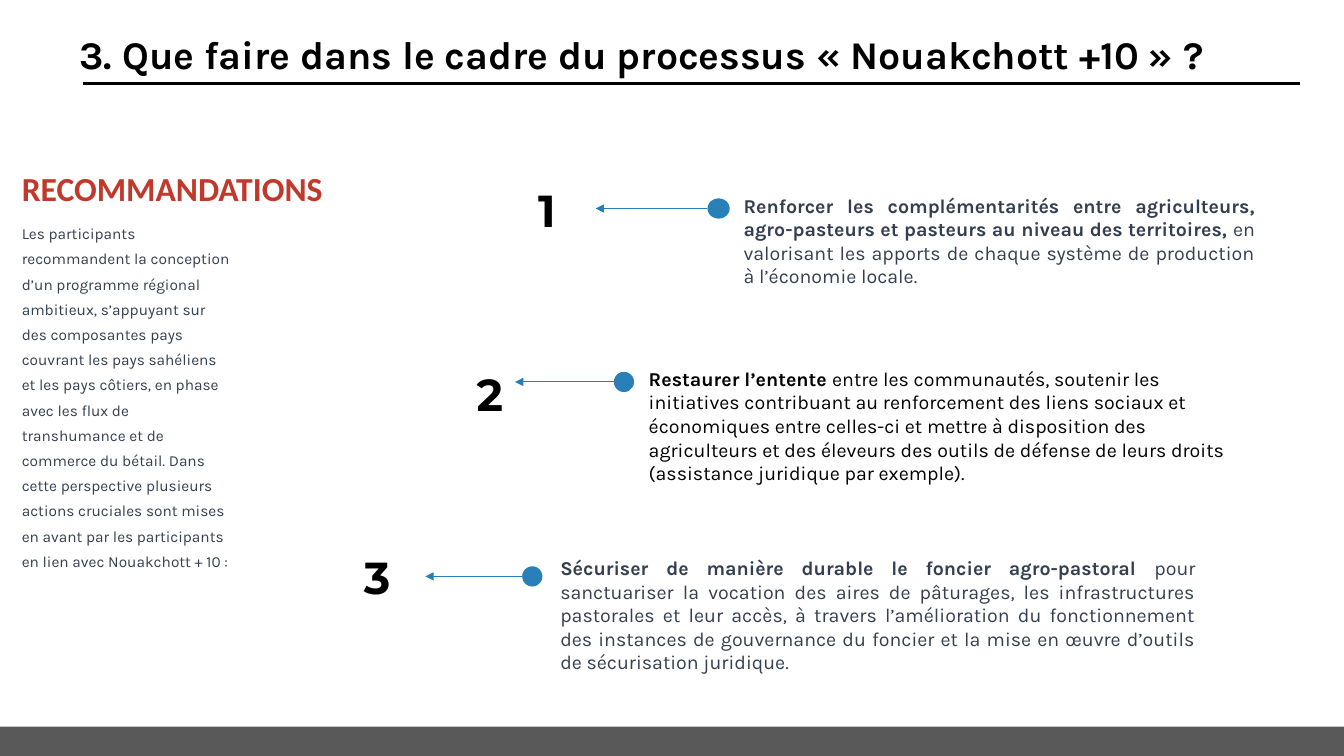
from dataclasses import dataclass

from lxml import etree
from pptx import Presentation
from pptx.dml.color import RGBColor
from pptx.enum import shapes, text
from pptx.oxml import ns
from pptx.util import Cm, Pt


@dataclass(frozen=True)
class Theme:
    black: str = "000000"
    slate: str = "333F50"
    red: str = "C0392B"
    blue: str = "2980B9"
    arrow: str = "257EB8"
    grey: str = "595959"
    body: str = "Karla"
    head: str = "Calibri"
    digit: str = "Montserrat"
    title_size: int = 28
    head_size: int = 24
    digit_size: int = 32
    item_size: int = 14
    note_size: int = 11


@dataclass(frozen=True)
class Box:
    left: float
    top: float
    width: float
    height: float

    def lengths(self) -> tuple:
        return Cm(self.left), Cm(self.top), Cm(self.width), Cm(self.height)


@dataclass(frozen=True)
class Style:
    font: str
    size: int
    color: str
    bold: bool = False


@dataclass(frozen=True)
class Action:
    digit: str
    digit_box: Box
    tip: float
    dot: Box
    box: Box
    lead: str
    rest: str
    color: str
    align: text.PP_ALIGN


THEME = Theme()
LEFT, JUST = text.PP_ALIGN.LEFT, text.PP_ALIGN.JUSTIFY
WIDTH, HEIGHT = 33.87, 19.05

ACTIONS = [
    Action("1", Box(13.31, 4.47, 1.32, 1.63), 15.01,
           Box(17.83, 5, 0.56, 0.51), Box(18.49, 4.75, 13.39, 2.64),
           "Renforcer les complémentarités entre agriculteurs, agro-pasteurs "
           "et pasteurs au niveau des territoires, ",
           "en valorisant les apports de chaque système de production "
           "à l’économie locale.",
           THEME.slate, JUST),
    Action("2", Box(11.76, 9.12, 1.14, 1.63), 12.98,
           Box(15.47, 9.37, 0.51, 0.51), Box(16.1, 9.12, 15.57, 2.64),
           "Restaurer l’entente ",
           "entre les communautés, soutenir les initiatives contribuant au "
           "renforcement des liens sociaux et économiques entre celles-ci et "
           "mettre à disposition des agriculteurs et des éleveurs des outils "
           "de défense de leurs droits (assistance juridique par exemple).",
           THEME.black, LEFT),
    Action("3", Box(8.92, 13.72, 1.3, 1.63), 10.72,
           Box(13.16, 14.27, 0.51, 0.51), Box(13.87, 13.89, 16.51, 3.25),
           "Sécuriser de manière durable le foncier agro-pastoral ",
           "pour sanctuariser la vocation des aires de pâturages, les "
           "infrastructures pastorales et leur accès, à travers "
           "l’amélioration du fonctionnement des instances de gouvernance du "
           "foncier et la mise en œuvre d’outils de sécurisation juridique.",
           THEME.slate, JUST),
]
NOTE = ("Les participants recommandent la conception d’un programme régional "
        "ambitieux, s’appuyant sur des composantes pays couvrant les pays "
        "sahéliens et les pays côtiers, en phase avec les flux de "
        "transhumance et de commerce du bétail. Dans cette perspective "
        "plusieurs actions cruciales sont mises en avant par les participants "
        "en lien avec Nouakchott + 10 :")


def write(frame, runs: list[tuple[str, Style]], align=LEFT,
          anchor=text.MSO_ANCHOR.TOP):
    """Fill the frame's first paragraph and return it."""
    frame.word_wrap = True
    frame.auto_size = text.MSO_AUTO_SIZE.NONE
    frame.vertical_anchor = anchor
    para = frame.paragraphs[0]
    para.alignment = align
    for words, style in runs:
        run = para.add_run()
        run.text = words
        run.font.name = style.font
        run.font.size = Pt(style.size)
        run.font.bold = style.bold
        run.font.color.rgb = RGBColor.from_string(style.color)
    return para


def add_text(slide, box: Box, runs: list[tuple[str, Style]], **layout):
    frame = slide.shapes.add_textbox(*box.lengths()).text_frame
    return write(frame, runs, **layout)


def add_solid(slide, kind, box: Box, color: str) -> None:
    shape = slide.shapes.add_shape(kind, *box.lengths())
    shape.shadow.inherit = False
    shape.fill.solid()
    shape.fill.fore_color.rgb = RGBColor.from_string(color)
    shape.line.fill.background()


def add_line(slide, start: float, end: float, y: float, color: str,
             weight: float, arrow: bool = False) -> None:
    line = slide.shapes.add_connector(
        shapes.MSO_CONNECTOR.STRAIGHT, Cm(start), Cm(y), Cm(end), Cm(y))
    line.line.color.rgb = RGBColor.from_string(color)
    line.line.width = Pt(weight)
    props = line.element.spPr
    if arrow:
        etree.SubElement(props.find(ns.qn("a:ln")), ns.qn("a:tailEnd"),
                         type="triangle")
    etree.SubElement(props, ns.qn("a:effectLst"))


def add_action(slide, act: Action) -> None:
    lead = Style(THEME.body, THEME.item_size, act.color, True)
    rest = Style(THEME.body, THEME.item_size, act.color)
    digit = Style(THEME.digit, THEME.digit_size, THEME.black, True)
    add_text(slide, act.box, [(act.lead, lead), (act.rest, rest)],
             align=act.align)
    add_solid(slide, shapes.MSO_SHAPE.OVAL, act.dot, THEME.blue)
    add_line(slide, act.dot.left, act.tip, act.dot.top + act.dot.height / 2,
             THEME.arrow, 0.75, arrow=True)
    add_text(slide, act.digit_box, [(act.digit, digit)])


def add_title(slide) -> None:
    title = slide.shapes.title
    title.left, title.top, title.width, title.height = Box(
        1.75, 0.64, 32.1, 1.45).lengths()
    style = Style(THEME.body, THEME.title_size, THEME.black, True)
    write(title.text_frame, [(
        "3. Que faire dans le cadre du processus « Nouakchott +10 » ?",
        style)])
    add_line(slide, 2.08, 32.77, 2.11, THEME.black, 2.25)


def add_intro(slide) -> None:
    head = Style(THEME.head, THEME.head_size, THEME.red, True)
    note = Style(THEME.body, THEME.note_size, THEME.slate)
    add_text(slide, Box(0.3, 3.05, 8.61, 2.31), [("RECOMMANDATIONS", head)],
             anchor=text.MSO_ANCHOR.BOTTOM)
    para = add_text(slide, Box(0.3, 5.36, 5.84, 8.51), [(NOTE, note)])
    para.line_spacing = Pt(18)
    para.space_after = Pt(12)


def main() -> None:
    deck = Presentation()
    deck.slide_width, deck.slide_height = Cm(WIDTH), Cm(HEIGHT)
    slide = deck.slides.add_slide(deck.slide_layouts[5])
    add_solid(slide, shapes.MSO_SHAPE.RECTANGLE,
              Box(0, 18.31, WIDTH, HEIGHT - 18.31), THEME.grey)
    add_title(slide)
    add_intro(slide)
    for act in ACTIONS:
        add_action(slide, act)
    deck.save("out.pptx")


if __name__ == "__main__":
    main()
